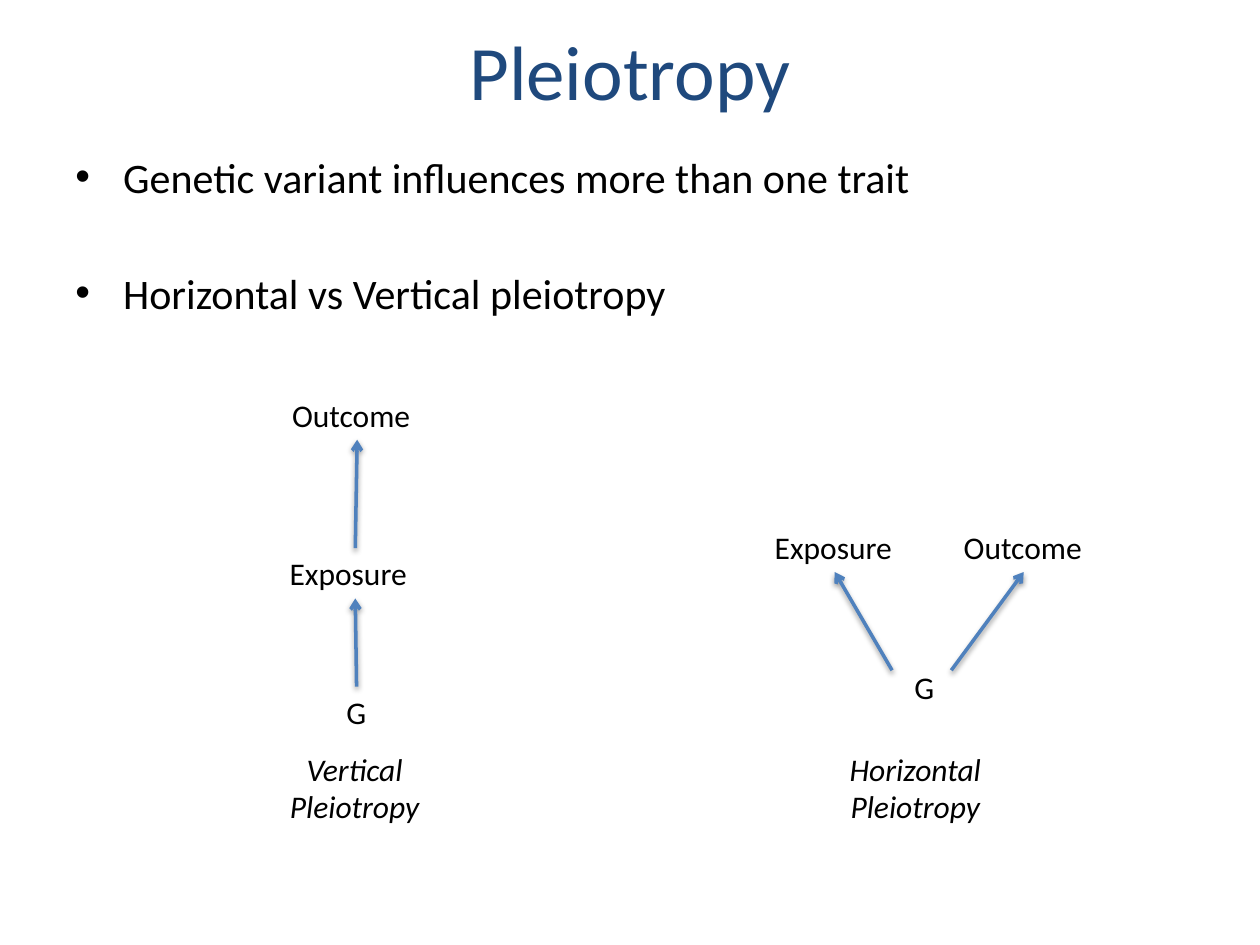
from lxml import etree
from pptx import Presentation
from pptx import util as u
from pptx.dml.color import RGBColor
from pptx.enum import shapes, text
from pptx.oxml import ns

NAVY = RGBColor(0x1F, 0x49, 0x7D)
BLUE = RGBColor(0x4F, 0x81, 0xBD)
BLACK = RGBColor(0, 0, 0)
FONT = "Calibri"

presentation = Presentation()
presentation.slide_width, presentation.slide_height = u.Inches(10), u.Inches(7.5)
slide = presentation.slides.add_slide(presentation.slide_layouts[5])


def add_text(content, left, top, width, height, size=18, italic=None, wrap=True):
    shape = slide.shapes.add_textbox(*map(u.Inches, (left, top, width, height)))
    shape.text_frame.text = content
    shape.text_frame.word_wrap = wrap
    for paragraph in shape.text_frame.paragraphs:
        font = paragraph.font
        font.name, font.size, font.italic = FONT, u.Pt(size), italic
        font.color.rgb = BLACK
    return shape


def add_arrow(start, end):
    points = [u.Inches(value) for value in (*start, *end)]
    arrow = slide.shapes.add_connector(shapes.MSO_CONNECTOR.STRAIGHT, *points)
    arrow.line.color.rgb = BLUE
    arrow.line.width = u.Pt(2)
    etree.SubElement(arrow.line._get_or_add_ln(), ns.qn("a:tailEnd"), type="arrow")
    return arrow


# Title
title = slide.shapes.title
title.left, title.top, title.width, title.height = map(u.Inches, (0.5, 0.05, 9, 1.01))
title.text_frame.text = "Pleiotropy"
title.text_frame.vertical_anchor = text.MSO_ANCHOR.MIDDLE
heading = title.text_frame.paragraphs[0]
heading.alignment = text.PP_ALIGN.CENTER
heading.font.name, heading.font.size = FONT, u.Pt(44)
heading.font.color.rgb = NAVY

# Bullets, the second set one empty line below the first
bullets = add_text("Genetic variant influences more than one trait\n"
                   "Horizontal vs Vertical pleiotropy", 0.5, 1.15, 9, 5.55, size=24)
for paragraph, gap in zip(bullets.text_frame.paragraphs, (4.8, 37.5)):
    paragraph.space_before = u.Pt(gap)
    properties = paragraph._p.get_or_add_pPr()
    properties.set("marL", str(u.Inches(0.38)))
    properties.set("indent", str(u.Inches(-0.38)))
    etree.SubElement(properties, ns.qn("a:buFont"), typeface="Arial")
    etree.SubElement(properties, ns.qn("a:buChar"), char="•")
    # Bullet settings come before the default run properties
    properties.append(properties.find(ns.qn("a:defRPr")))

# Horizontal pleiotropy: the variant acts on both traits
add_text("G", 7.16, 5.25, 0.36, 0.4, wrap=False)
for trait, left, start in (("Exposure", 6.05, 7.08), ("Outcome", 7.55, 7.55)):
    label = add_text(trait, left, 4.14, 1.15, 0.4)
    add_arrow((start, 5.32), (left + 0.58, 4.54)).end_connect(label, 2)

# Vertical pleiotropy: the variant acts on the outcome through the exposure
chain = [add_text("G", 2.65, 5.45, 0.36, 0.4, wrap=False),
         add_text("Exposure", 2.2, 4.35, 1.24, 0.4),
         add_text("Outcome", 2.22, 3.09, 1.23, 0.4)]
for cause, effect in zip(chain, chain[1:]):
    arrow = add_arrow((2.82, 5.45), (2.82, 4.75))
    arrow.begin_connect(cause, 0)
    arrow.end_connect(effect, 2)

# Captions
for kind, left in (("Vertical", 2.18), ("Horizontal", 6.63)):
    caption = add_text(f"{kind} Pleiotropy", left, 5.9, 1.27, 0.71, italic=True)
    caption.text_frame.paragraphs[0].alignment = text.PP_ALIGN.CENTER

presentation.save("out.pptx")
